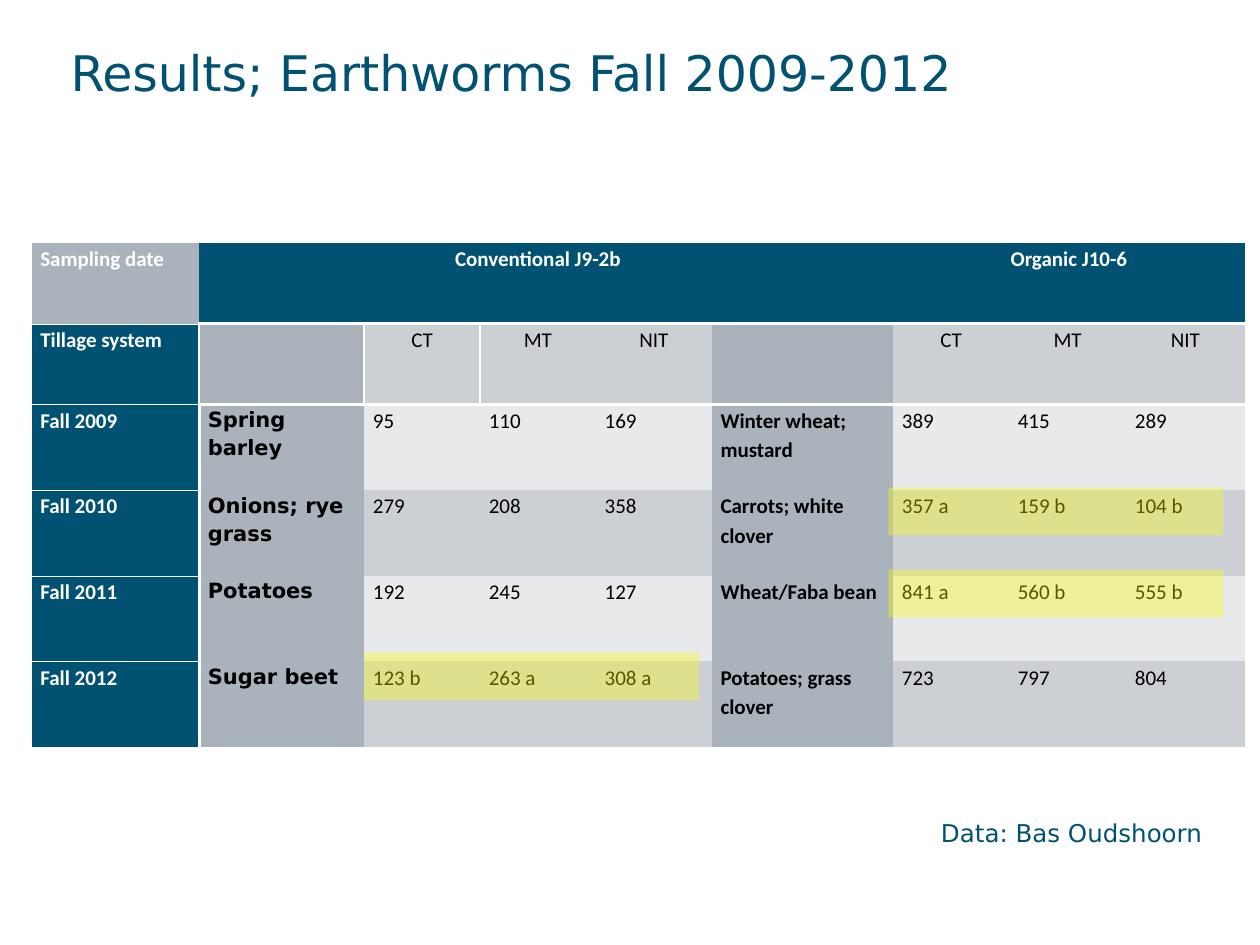
from lxml import etree
from pptx import Presentation
from pptx.dml.color import RGBColor
from pptx.enum.shapes import MSO_SHAPE
from pptx.enum.text import PP_ALIGN
from pptx.oxml.ns import qn
from pptx.util import Inches, Pt

LEFT, CENTER, JUSTIFY = PP_ALIGN.LEFT, PP_ALIGN.CENTER, PP_ALIGN.JUSTIFY
RECTANGLE = MSO_SHAPE.RECTANGLE
BLANK_LAYOUT = 6
NO_STYLE = "{2D5ABB26-0587-4C30-8999-92F81FD0307C}"
HEADING_FONT, TABLE_FONT = "DejaVu Sans", "Calibri"

COLORS = {
    "navy": "005172",
    "crop": "AAB3BC",
    "dark_band": "CCD0D5",
    "light_band": "E7E9EB",
    "white": "FFFFFF",
    "black": "000000",
    "highlight": "FFFF00",
}

COLUMN_WIDTHS = [1.33, 1.31, 0.92, 0.92, 0.92, 1.44, 0.92, 0.93, 0.94]
ROW_HEIGHTS = [0.64] * 2 + [0.68] * 4
CROP_COLUMNS = (1, 5)
SYSTEM_STARTS = (2, 6)
TILLAGE = ["CT", "MT", "NIT"]
ROWS = [
    ["Sampling date", "", "Conventional J9-2b", "", "", "", "Organic J10-6", "", ""],
    ["Tillage system", "", *TILLAGE, "", *TILLAGE],
    ["Fall 2009", "Spring barley", "95", "110", "169",
     "Winter wheat; mustard", "389", "415", "289"],
    ["Fall 2010", "Onions; rye grass", "279", "208", "358",
     "Carrots; white clover", "357 a", "159 b", "104 b"],
    ["Fall 2011", "Potatoes", "192", "245", "127",
     "Wheat/Faba bean", "841 a", "560 b", "555 b"],
    ["Fall 2012", "Sugar beet", "123 b", "263 a", "308 a",
     "Potatoes; grass clover", "723", "797", "804"],
]
HIGHLIGHTS = [(7.05, 4.52), (7.05, 3.87), (2.89, 5.18)]


def rgb(name):
    return RGBColor.from_string(COLORS[name])


def write(paragraph, text, color, **font_format):
    run = paragraph.add_run()
    run.text = text
    run.font.color.rgb = rgb(color)
    for attribute, value in font_format.items():
        setattr(run.font, attribute, value)


def add_heading(slide, text, box, size, line_spacing, margins):
    heading = slide.shapes.add_textbox(*map(Inches, box))
    frame = heading.text_frame
    frame.word_wrap = True
    for side, margin in margins.items():
        setattr(frame, f"margin_{side}", Inches(margin))
    paragraph = frame.paragraphs[0]
    paragraph.line_spacing = Pt(line_spacing)
    write(paragraph, text, "navy", size=Pt(size), name=HEADING_FONT)


def add_border(cell, side, width):
    """Draw a white border; side is L, R, T or B."""
    line = etree.SubElement(cell._tc.get_or_add_tcPr(), qn(f"a:ln{side}"), w=str(Pt(width)))
    fill = etree.SubElement(line, qn("a:solidFill"))
    etree.SubElement(fill, qn("a:srgbClr"), val=COLORS["white"])


def cell_borders(row, column):
    """Return border widths by side, in the order the file format asks for."""
    if row == 0:
        return {"B": 2 if column else 0.25}
    if column == 0:
        borders = {"R": 1 if row == 1 else 2, "T": 0.25}
        if row < len(ROWS) - 1:
            borders["B"] = 0.25
        return borders
    if row == 1:
        return {1: {"L": 1, "R": 1}, 2: {"L": 1}}.get(column, {}) | {"T": 2}
    return {}


def cell_fill(row, column):
    if (row, column) == (0, 0) or (row > 0 and column in CROP_COLUMNS):
        return "crop"
    if row == 0 or column == 0:
        return "navy"
    return "dark_band" if row % 2 else "light_band"


def format_cell(cell, row, column):
    for side, width in cell_borders(row, column).items():
        add_border(cell, side, width)
    cell.fill.solid()
    cell.fill.fore_color.rgb = rgb(cell_fill(row, column))
    cell.margin_left = cell.margin_right = Inches(0.07)
    cell.margin_top = cell.margin_bottom = 0

    text = ROWS[row][column]
    if not text:
        return
    is_header = row == 0 or column == 0
    is_crop = column in CROP_COLUMNS
    paragraph = cell.text_frame.paragraphs[0]
    paragraph.line_spacing = 1.15
    if is_crop:
        paragraph.alignment = LEFT
        paragraph.space_after = Pt(10)
    else:
        paragraph.alignment = CENTER if row < 2 and column else JUSTIFY
    write(paragraph, text, "white" if is_header else "black", size=Pt(12),
          bold=is_header or is_crop,
          name=HEADING_FONT if column == CROP_COLUMNS[0] else TABLE_FONT)


def add_earthworm_table(slide):
    table = slide.shapes.add_table(
        len(ROWS), len(COLUMN_WIDTHS), Inches(0.25), Inches(1.93),
        Inches(sum(COLUMN_WIDTHS)), Inches(sum(ROW_HEIGHTS))).table
    table._tbl.tblPr.find(qn("a:tableStyleId")).text = NO_STYLE
    for column, width in zip(table.columns, COLUMN_WIDTHS):
        column.width = Inches(width)
    for row, height in zip(table.rows, ROW_HEIGHTS):
        row.height = Inches(height)
    for start in SYSTEM_STARTS:
        table.cell(0, start).merge(table.cell(0, start + len(TILLAGE) - 1))
    for row in range(len(ROWS)):
        for column in range(len(COLUMN_WIDTHS)):
            format_cell(table.cell(row, column), row, column)


def add_highlight(slide, left, top):
    marker = slide.shapes.add_shape(
        RECTANGLE, Inches(left), Inches(top), Inches(2.66), Inches(0.38))
    marker.shadow.inherit = False
    marker.line.fill.background()
    marker.fill.solid()
    marker.fill.fore_color.rgb = rgb("highlight")
    color = marker._element.spPr.find(qn("a:solidFill"))[0]
    etree.SubElement(color, qn("a:alpha"), val="34000")


def main():
    presentation = Presentation()
    presentation.slide_width, presentation.slide_height = Inches(10), Inches(7.5)
    slide = presentation.slides.add_slide(presentation.slide_layouts[BLANK_LAYOUT])
    add_heading(slide, "Results; Earthworms Fall 2009-2012", (0.54, 0.25, 9.23, 0.86),
                28, 40, {"left": 0.02, "top": 0, "right": 0.1, "bottom": 0.35})
    add_heading(slide, "Data: Bas Oudshoorn", (7.37, 6.43, 2.34, 0.35), 14, 18, {})
    add_earthworm_table(slide)
    for left, top in HIGHLIGHTS:
        add_highlight(slide, left, top)
    presentation.save("out.pptx")


if __name__ == "__main__":
    main()
